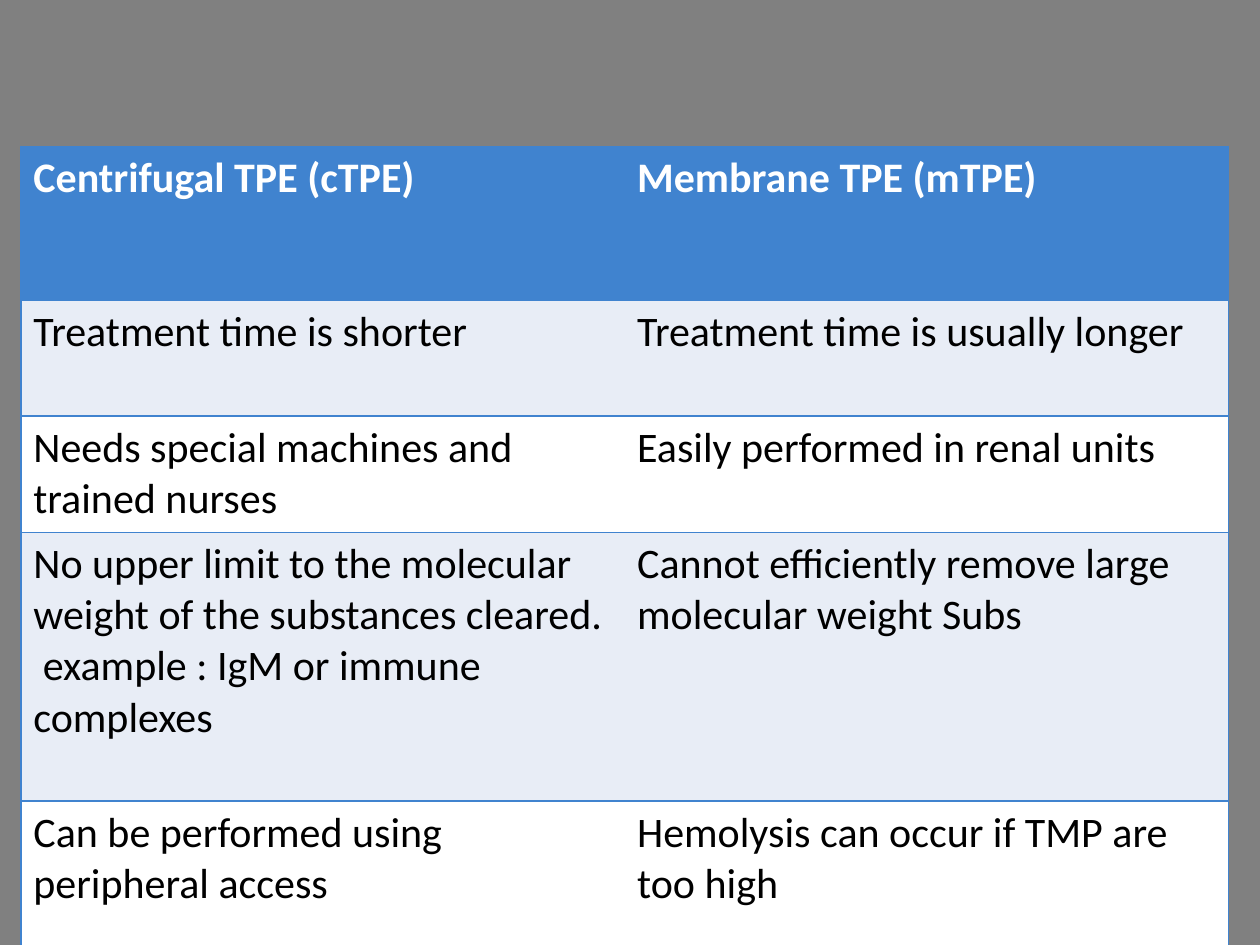
"""Build a slide comparing centrifugal and membrane plasma exchange."""
from lxml import etree
from pptx import Presentation
from pptx.dml.color import RGBColor
from pptx.oxml.ns import qn
from pptx.util import Cm, Pt

BLUE = RGBColor(0x40, 0x83, 0xCF)
PALE = RGBColor(0xE8, 0xED, 0xF6)
WHITE = RGBColor(0xFF, 0xFF, 0xFF)
BLACK = RGBColor(0x00, 0x00, 0x00)
GREY = RGBColor(0x80, 0x80, 0x80)

ROWS = [
    (3.1, ["Centrifugal TPE (cTPE)"], ["Membrane TPE (mTPE)"]),
    (2.34, ["Treatment time is shorter"], ["Treatment time is usually longer"]),
    (2.34, ["Needs special machines and trained nurses"],
     ["Easily performed in renal units"]),
    (5.42, ["No upper limit to the molecular weight of the substances cleared.",
            " example : IgM or immune complexes"],
     ["Cannot efficiently remove large molecular weight Subs"]),
    (3.1, ["Can be performed using peripheral access"],
     ["Hemolysis can occur if TMP are too high"]),
]
COLUMN_WIDTH = 12.17
LEFT, TOP = 0.42, 2.95


def set_borders(cell, visible_sides):
    properties = cell._tc.get_or_add_tcPr()
    for position, side in enumerate("LRTB"):
        line = etree.Element(qn(f"a:ln{side}"), w=str(Pt(1)))
        if side in visible_sides:
            fill = etree.SubElement(line, qn("a:solidFill"))
            etree.SubElement(fill, qn("a:srgbClr"), val=str(BLUE))
        else:
            etree.SubElement(line, qn("a:noFill"))
        properties.insert(position, line)


def write_cell(cell, texts, fill, color, bold):
    cell.fill.solid()
    cell.fill.fore_color.rgb = fill
    frame = cell.text_frame
    for index, text in enumerate(texts):
        paragraph = frame.add_paragraph() if index else frame.paragraphs[0]
        run = paragraph.add_run()
        run.text = text
        run.font.name = "Calibri"
        run.font.size = Pt(24)
        run.font.bold = bold
        run.font.color.rgb = color


def main():
    presentation = Presentation()
    presentation.slide_width, presentation.slide_height = Cm(25.4), Cm(19.05)
    slide = presentation.slides.add_slide(presentation.slide_layouts[6])
    slide.background.fill.solid()
    slide.background.fill.fore_color.rgb = GREY

    height = sum(row[0] for row in ROWS)
    table = slide.shapes.add_table(len(ROWS), 2, Cm(LEFT), Cm(TOP),
                                   Cm(2 * COLUMN_WIDTH), Cm(height)).table
    table.horz_banding = False
    for column in table.columns:
        column.width = Cm(COLUMN_WIDTH)
    for row_index, (row_height, *cells) in enumerate(ROWS):
        table.rows[row_index].height = Cm(row_height)
        header = row_index == 0
        fill = BLUE if header else PALE if row_index % 2 else WHITE
        for column_index, texts in enumerate(cells):
            cell = table.cell(row_index, column_index)
            write_cell(cell, texts, fill, WHITE if header else BLACK, header)
            set_borders(cell, "RTB" if column_index else "LTB")
    presentation.save("out.pptx")


if __name__ == "__main__":
    main()
